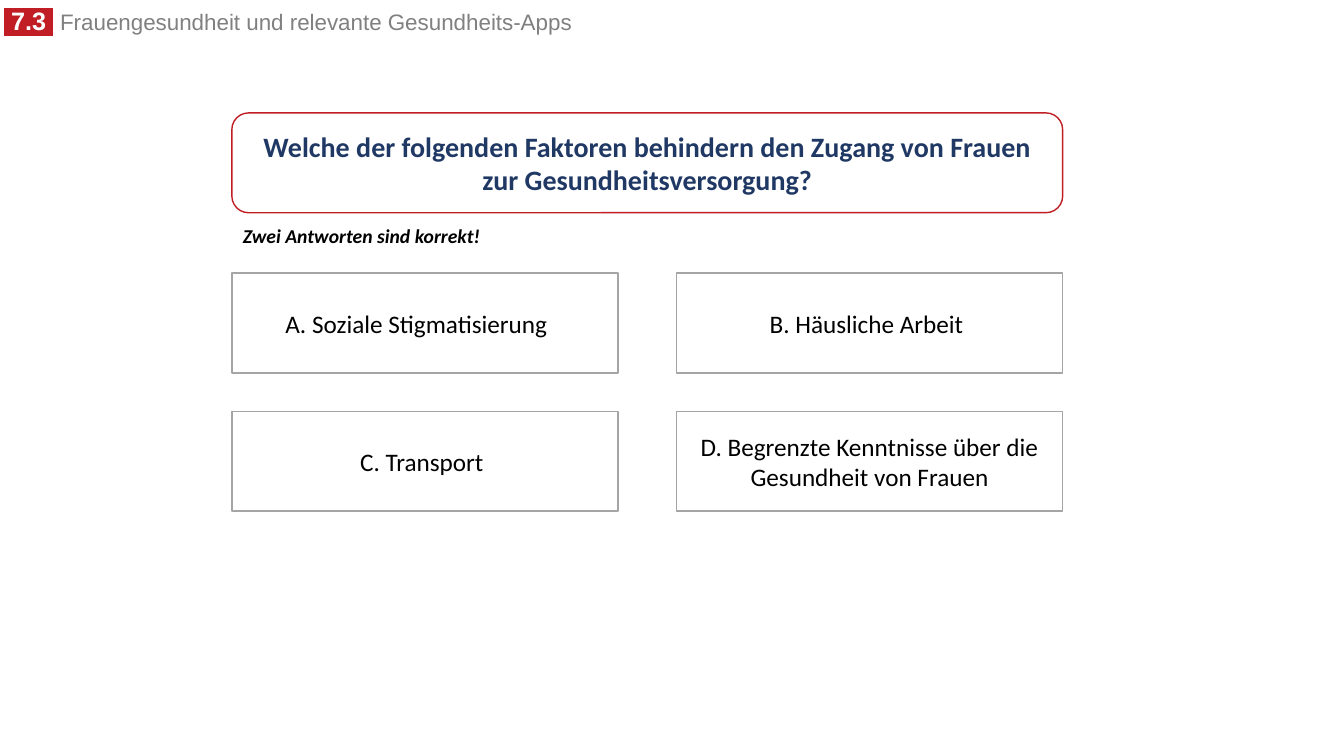
import pptx
import pptx.util
import pptx.dml.color
import pptx.enum.shapes
import pptx.enum.text
import pptx.oxml.ns
import lxml.etree
from dataclasses import dataclass

Inches = pptx.util.Inches
SHAPE = pptx.enum.shapes.MSO_SHAPE
ALIGN = pptx.enum.text.PP_ALIGN
ANCHOR = pptx.enum.text.MSO_ANCHOR


@dataclass(frozen=True)
class Theme:
    red: str = "C01E24"
    navy: str = "203864"
    grey: str = "808080"
    border: str = "A5A5A5"
    white: str = "FFFFFF"
    black: str = "000000"
    head_font: str = "Arial"
    body_font: str = "Calibri"
    number_size: int = 18
    head_size: int = 16
    question_size: int = 20
    answer_size: int = 18
    hint_size: int = 14
    line: float = 1


THEME = Theme()


def rgb(value):
    return pptx.dml.color.RGBColor.from_string(value)


def add_text(p, text, size, color=THEME.black, font=THEME.body_font,
             bold=False, italic=False, highlight=None):
    r = p.add_run()
    r.text = text
    r.font.size = pptx.util.Pt(size)
    r.font.name = font
    r.font.bold = bold
    r.font.italic = italic
    r.font.color.rgb = rgb(color)
    if highlight:
        qn = pptx.oxml.ns.qn
        mark = lxml.etree.Element(qn("a:highlight"))
        lxml.etree.SubElement(mark, qn("a:srgbClr"), val=highlight)
        r.font.fill  
        r._r.rPr.find(qn("a:solidFill")).addnext(mark)


def add_box(s, kind, box, line):
    sp = s.shapes.add_shape(kind, *map(Inches, box))
    sp.shadow.inherit = False
    sp.fill.solid()
    sp.fill.fore_color.rgb = rgb(THEME.white)
    sp.line.color.rgb = rgb(line)
    sp.line.width = pptx.util.Pt(THEME.line)
    tf = sp.text_frame
    tf.word_wrap = True
    tf.vertical_anchor = ANCHOR.MIDDLE
    tf.paragraphs[0].alignment = ALIGN.CENTER
    return sp


def add_header(s, box, number, title):
    sp = s.shapes.title
    sp.left, sp.top, sp.width, sp.height = map(Inches, box)
    tf = sp.text_frame
    tf.auto_size = pptx.enum.text.MSO_AUTO_SIZE.NONE
    tf.vertical_anchor = ANCHOR.TOP
    p = tf.paragraphs[0]
    p.alignment = ALIGN.LEFT
    p.line_spacing = 0.8
    add_text(p, f" {number} ", THEME.number_size, THEME.white, THEME.head_font,
             bold=True, highlight=THEME.red)
    add_text(p, " ", THEME.number_size, THEME.grey, THEME.head_font)
    add_text(p, title, THEME.head_size, THEME.grey, THEME.head_font)


def add_question(s, box, text, hint):
    left, top, width, height = box
    sp = add_box(s, SHAPE.ROUNDED_RECTANGLE, box, THEME.red)
    add_text(sp.text_frame.paragraphs[0], text, THEME.question_size, THEME.navy, bold=True)
    tb = s.shapes.add_textbox(*map(Inches, (left + 0.01, top + height + 0.06, 2.57, 0.34)))
    tb.text_frame.word_wrap = False
    add_text(tb.text_frame.paragraphs[0], hint, THEME.hint_size, bold=True, italic=True)


def add_answers(s, box, answers, columns=2, gap_x=0.58, gap_y=0.38):
    left, top, width, height = box
    rows = -(-len(answers) // columns)
    w = (width - gap_x * (columns - 1)) / columns
    h = (height - gap_y * (rows - 1)) / rows
    for i, (text, right_inset) in enumerate(answers):
        row, column = divmod(i, columns)
        cell = (left + column * (w + gap_x), top + row * (h + gap_y), w, h)
        sp = add_box(s, SHAPE.RECTANGLE, cell, THEME.border)
        sp.text_frame.margin_right = Inches(right_inset)
        add_text(sp.text_frame.paragraphs[0], text, THEME.answer_size)


def main():
    prs = pptx.Presentation()
    prs.slide_width, prs.slide_height = Inches(13.33), Inches(7.5)
    s = prs.slides.add_slide(prs.slide_layouts[5])
    add_header(s, (-0.06, 0.06, 6.86, 0.35), "7.3",
               "Frauengesundheit und relevante Gesundheits-Apps")
    add_question(s, (2.3, 1.12, 8.24, 0.99),
                 "Welche der folgenden Faktoren behindern den Zugang von Frauen "
                 "zur Gesundheitsversorgung?",
                 "Zwei Antworten sind korrekt!")
    add_answers(s, (2.3, 2.71, 8.24, 2.36), [
        ("A. Soziale Stigmatisierung", 0.27),
        ("B. Häusliche Arbeit", 0.16),
        ("C. Transport", 0.16),
        ("D. Begrenzte Kenntnisse über die Gesundheit von Frauen", 0.1),
    ])
    prs.save("out.pptx")


if __name__ == "__main__":
    main()
